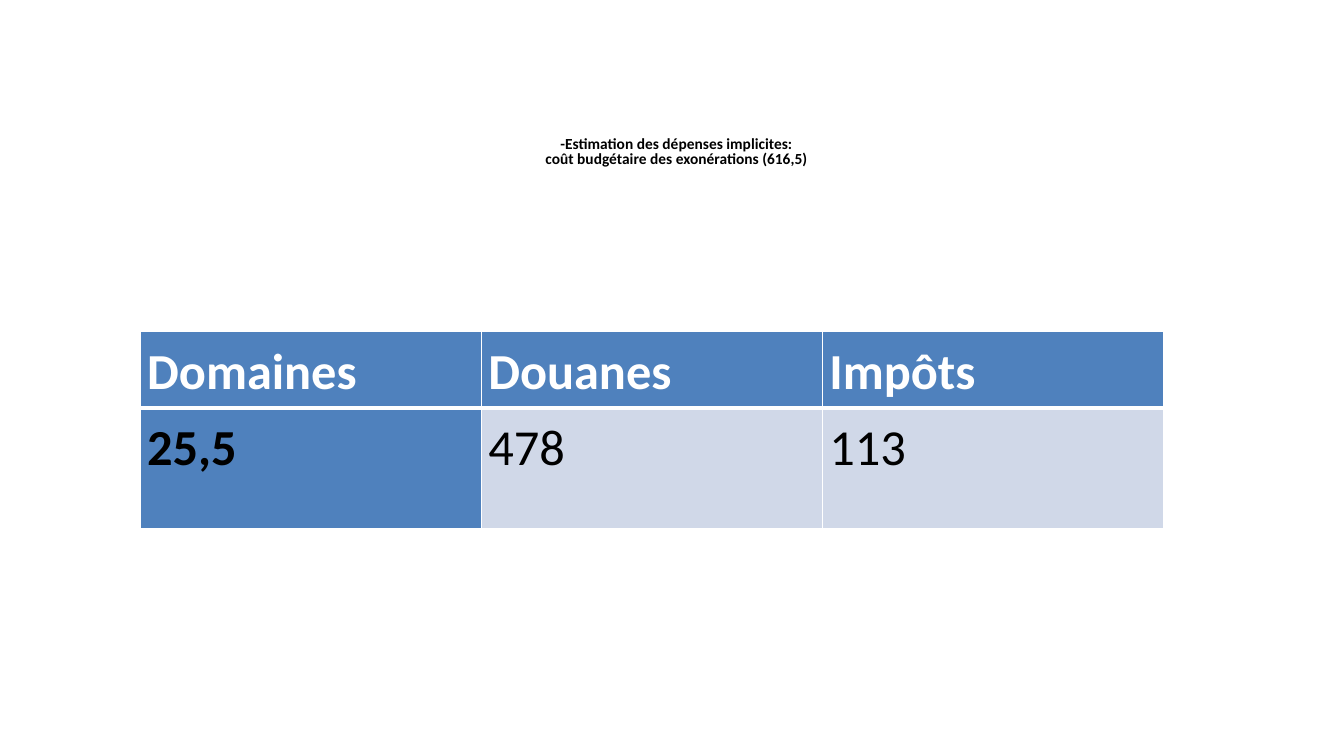
from pptx import Presentation
from pptx.dml.color import RGBColor
from pptx.enum.text import MSO_ANCHOR, MSO_AUTO_SIZE, PP_ALIGN
from pptx.oxml import parse_xml
from pptx.oxml.ns import nsdecls
from pptx.util import Inches, Pt

COLORS = {"text": "000000", "light": "FFFFFF", "accent": "4F81BD", "band": "D0D8E8"}
FONT = "Calibri"
TITLE = "-Estimation des dépenses implicites:\vcoût budgétaire des exonérations (616,5)"
ROWS = [["Domaines", "Douanes", "Impôts"], ["25,5", "478", "113"]]
ROW_HEIGHTS = [0.76, 1.19]
THIN, THICK = 0.96, 3


class SlideBuilder:
    def __init__(self, prs):
        self.slide = prs.slides.add_slide(prs.slide_layouts[5])

    def format_paragraph(self, p, size, color, bold, align, spacing):
        p.alignment = align
        p.line_spacing = spacing
        for r in p.runs:
            r.font.name = FONT
            r.font.size = Pt(size)
            r.font.bold = bold
            r.font.color.rgb = RGBColor.from_string(COLORS[color])

    def title(self, text, left, top, width, height):
        sp = self.slide.shapes.title
        sp.left, sp.top = Inches(left), Inches(top)
        sp.width, sp.height = Inches(width), Inches(height)
        tf = sp.text_frame
        tf.auto_size = MSO_AUTO_SIZE.NONE
        tf.vertical_anchor = MSO_ANCHOR.MIDDLE
        p = tf.paragraphs[0]
        p.text = text
        self.format_paragraph(p, 11, "text", True, PP_ALIGN.CENTER, 0.8)

    def borders(self, cell, **widths):
        """Add white cell borders, keyed by side (L, R, T, B), before any fill."""
        tc_pr = cell._tc.get_or_add_tcPr()
        for side, width in widths.items():
            tc_pr.append(parse_xml(
                f'<a:ln{side} {nsdecls("a")} w="{Pt(width)}"><a:solidFill>'
                f'<a:srgbClr val="{COLORS["light"]}"/></a:solidFill></a:ln{side}>'))

    def cell(self, cell, text, is_header, is_first):
        cell.margin_left = cell.margin_right = Inches(0.07)
        cell.margin_top = cell.margin_bottom = Inches(0.05)
        self.borders(cell, L=THIN, R=THIN, T=THIN if is_header else THICK,
                     B=THICK if is_header else THIN)
        strong = is_header or is_first
        cell.fill.solid()
        cell.fill.fore_color.rgb = RGBColor.from_string(COLORS["accent" if strong else "band"])
        p = cell.text_frame.paragraphs[0]
        p.text = text
        self.format_paragraph(p, 36, "light" if is_header else "text", strong,
                              PP_ALIGN.JUSTIFY, 1.07)

    def table(self, rows, heights, left, top, width):
        table = self.slide.shapes.add_table(
            len(rows), len(rows[0]), Inches(left), Inches(top),
            Inches(width), Inches(sum(heights))).table
        for i, (row, height) in enumerate(zip(rows, heights)):
            table.rows[i].height = Inches(height)
            for j, text in enumerate(row):
                self.cell(table.cell(i, j), text, i == 0, j == 0)


def main():
    prs = Presentation()
    prs.slide_width, prs.slide_height = Inches(13.33), Inches(7.5)
    s = SlideBuilder(prs)
    s.title(TITLE, 0.71, 0.6, 12, 1.83)
    s.table(ROWS, ROW_HEIGHTS, 1.39, 3.29, 10.15)
    prs.save("out.pptx")


if __name__ == "__main__":
    main()
